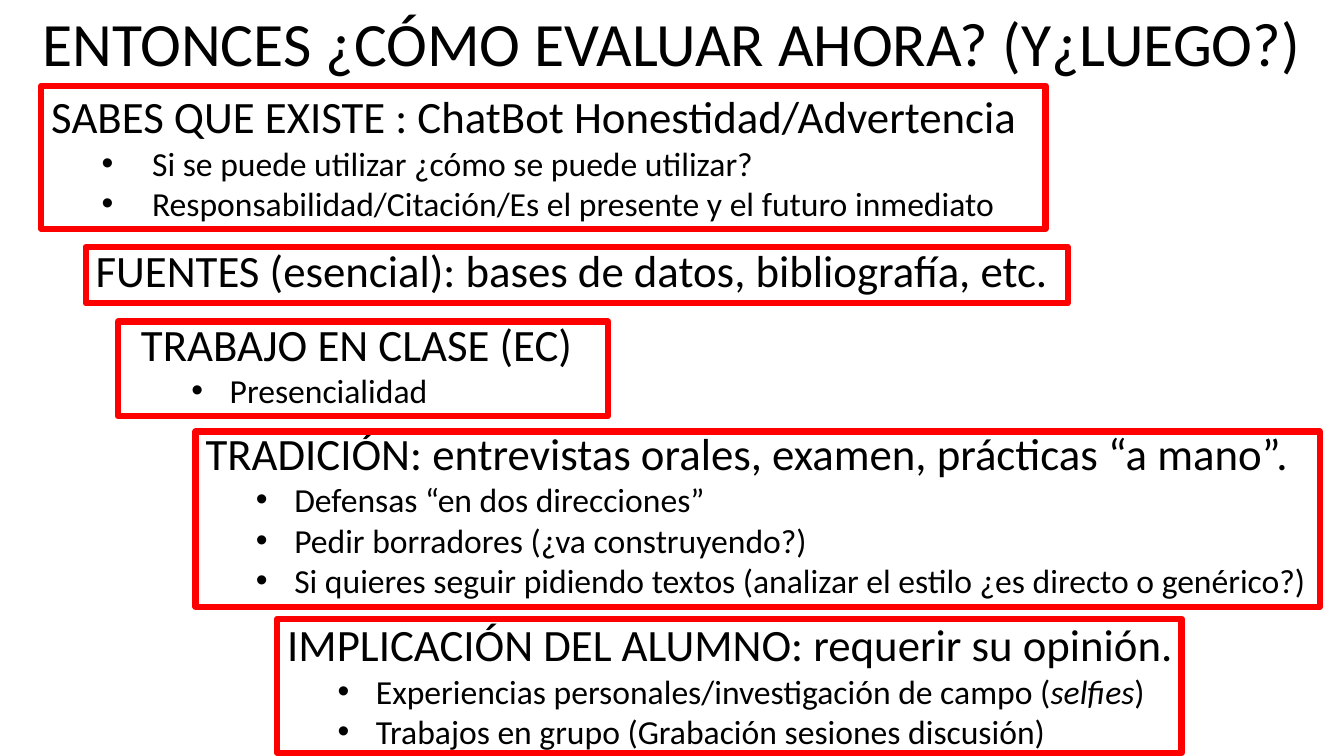
"""Build the slide on how to evaluate students now."""
from dataclasses import dataclass

from lxml import etree
from pptx import Presentation
from pptx.dml.color import RGBColor
from pptx.enum.shapes import MSO_SHAPE
from pptx.enum.text import MSO_AUTO_SIZE, PP_ALIGN
from pptx.oxml.ns import qn
from pptx.util import Emu, Pt

RECTANGLE = MSO_SHAPE.RECTANGLE
GROW = MSO_AUTO_SIZE.SHAPE_TO_FIT_TEXT
CENTER = PP_ALIGN.CENTER
EMU_PER_PX = 9144
FONT = "Calibri"
COLORS = {"text": "000000", "frame": "FF0000"}
TITLE_SIZE, HEADING_SIZE, BULLET_SIZE = 44, 32, 24
FRAME_WIDTH = 4.5
ITALIC_MARK = "*"


@dataclass(frozen=True)
class Area:
    left: int
    top: int
    width: int
    height: int


@dataclass(frozen=True)
class Section:
    heading: str
    text_area: Area
    frame_area: Area
    bullets: tuple[str, ...] = ()
    margin: int = 88
    hanging: int = 38


TITLE = "ENTONCES ¿CÓMO EVALUAR AHORA? (Y¿LUEGO?)"
TITLE_AREA = Area(0, 0, 1333, 84)
SECTIONS = (
    Section("SABES QUE EXISTE : ChatBot Honestidad/Advertencia",
            Area(41, 83, 1019, 145), Area(41, 85, 996, 142),
            ("Si se puede utilizar ¿cómo se puede utilizar?",
             "Responsabilidad/Citación/Es el presente y el futuro inmediato"),
            margin=100, hanging=50),
    Section("FUENTES (esencial): bases de datos, bibliografía, etc.",
            Area(85, 236, 1030, 64), Area(85, 245, 974, 56)),
    Section("TRABAJO EN CLASE (EC)",
            Area(130, 309, 1139, 104), Area(117, 319, 486, 94),
            ("Presencialidad",)),
    Section("TRADICIÓN: entrevistas orales, examen, prácticas “a mano”.",
            Area(194, 417, 1139, 239), Area(194, 428, 1115, 174),
            ("Defensas “en dos direcciones”",
             "Pedir borradores (¿va construyendo?)",
             "Si quieres seguir pidiendo textos (analizar el estilo ¿es directo o genérico?)")),
    Section("IMPLICACIÓN DEL ALUMNO: requerir su opinión.",
            Area(275, 607, 1139, 279), Area(275, 614, 897, 133),
            ("Experiencias personales/investigación de campo (*selfies*)",
             "Trabajos en grupo (Grabación sesiones discusión)")),
)


def px(length: int) -> Emu:
    """Convert px to EMU."""
    return Emu(length * EMU_PER_PX)


def place(area: Area) -> tuple[Emu, Emu, Emu, Emu]:
    """Give an area in EMU."""
    return px(area.left), px(area.top), px(area.width), px(area.height)


def color(name: str) -> RGBColor:
    """Look up a colour."""
    return RGBColor.from_string(COLORS[name])


def write(para, text: str, size: int) -> None:
    """Fill a paragraph, with marked words in italics."""
    for index, part in enumerate(text.split(ITALIC_MARK)):
        span = para.add_run()
        span.text = part
        span.font.name = FONT
        span.font.size = Pt(size)
        span.font.color.rgb = color("text")
        if index % 2:
            span.font.italic = True


def add_bullet(para, section: Section) -> None:
    """Give a paragraph a hanging bullet."""
    para.level = 1
    properties = para._p.get_or_add_pPr()
    properties.set("marL", str(px(section.margin)))
    properties.set("indent", str(px(-section.hanging)))
    etree.SubElement(properties, qn("a:buFont"), typeface="Arial")
    etree.SubElement(properties, qn("a:buChar"), char="•")


def add_text(page, area: Area, text: str, size: int):
    """Add a wrapping text box and return its text frame."""
    frame = page.shapes.add_textbox(*place(area)).text_frame
    frame.word_wrap = True
    frame.auto_size = GROW
    write(frame.paragraphs[0], text, size)
    return frame


def add_section(page, section: Section) -> None:
    """Add a heading with its bullets."""
    frame = add_text(page, section.text_area, section.heading, HEADING_SIZE)
    for bullet in section.bullets:
        para = frame.add_paragraph()
        add_bullet(para, section)
        write(para, bullet, BULLET_SIZE)


def add_frame(page, area: Area) -> None:
    """Add an unfilled outline box."""
    box = page.shapes.add_shape(RECTANGLE, *place(area))
    box.shadow.inherit = False
    box.fill.background()
    box.line.color.rgb = color("frame")
    box.line.width = Pt(FRAME_WIDTH)


def main() -> None:
    """Build and save the deck."""
    deck = Presentation()
    deck.slide_width, deck.slide_height = px(1333), px(750)
    page = deck.slides.add_slide(deck.slide_layouts[6])
    title = add_text(page, TITLE_AREA, TITLE, TITLE_SIZE)
    title.paragraphs[0].alignment = CENTER
    for section in SECTIONS:
        add_section(page, section)
    for section in SECTIONS:
        add_frame(page, section.frame_area)
    deck.save("out.pptx")


if __name__ == "__main__":
    main()
